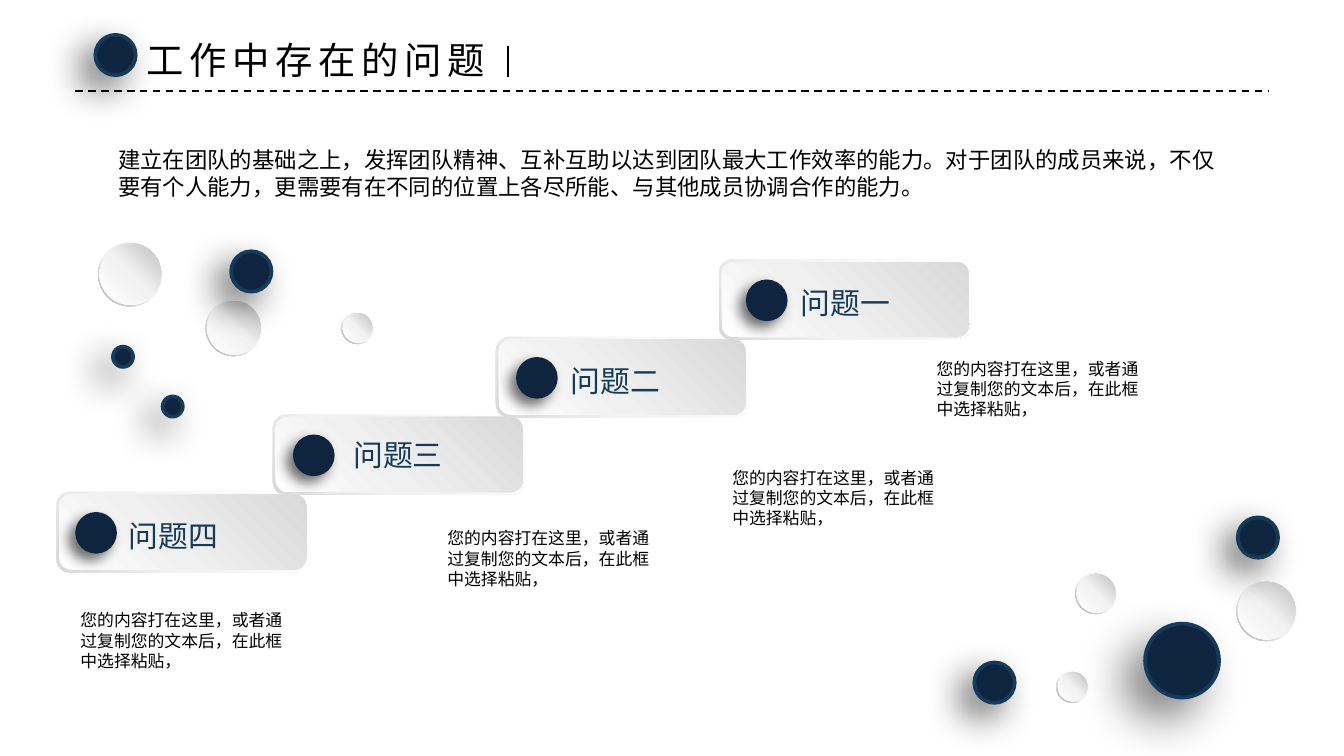
from lxml import etree
from pptx import Presentation
from pptx.dml.color import RGBColor
from pptx.enum.dml import MSO_LINE
from pptx.enum.shapes import MSO_CONNECTOR, MSO_SHAPE as SHAPE
from pptx.enum.text import MSO_AUTO_SIZE as AUTO
from pptx.oxml.ns import qn
from pptx.util import Inches, Pt

BLACK = RGBColor(0x00, 0x00, 0x00)
NAVY = RGBColor(0x0F, 0x24, 0x3E)
BLUE = RGBColor(0x16, 0x3A, 0x5A)
WHITE = RGBColor(0xFF, 0xFF, 0xFF)
PALE = RGBColor(0xF2, 0xF2, 0xF2)
SOFT = RGBColor(0xF0, 0xF0, 0xF0)
LIGHT = RGBColor(0xD9, 0xD9, 0xD9)
SILVER = RGBColor(0xBF, 0xBF, 0xBF)
GRAY = RGBColor(0xA6, 0xA6, 0xA6)

CJK = "Noto Sans CJK SC"
BODY = "Arial"


class Deck:
    def __init__(self, prs):
        self.s = prs.slides.add_slide(prs.slide_layouts[6])

    def shape(self, kind, x, y, w, h, parent=None):
        shapes = (parent or self.s).shapes
        sp = shapes.add_shape(kind, Inches(x), Inches(y), Inches(w), Inches(h))
        sp.line.fill.background()
        sp.shadow.inherit = False
        return sp

    def gradient(self, sp, stops, angle):
        """Fill with (percent, colour) stops, the angle running clockwise."""
        sp.fill.gradient()
        grad = sp._element.spPr.find(qn("a:gradFill"))
        for child in list(grad):
            grad.remove(child)
        gs_list = etree.SubElement(grad, qn("a:gsLst"))
        for percent, color in stops:
            gs = etree.SubElement(gs_list, qn("a:gs"), pos=str(percent * 1000))
            etree.SubElement(gs, qn("a:srgbClr"), val=str(color))
        etree.SubElement(grad, qn("a:lin"), ang=str(angle * 60000), scaled="0")

    def dot(self, x, y, size, shadow, outlined=True, parent=None):
        """Navy disc; shadow is (opacity percent, blur pt, distance pt)."""
        sp = self.shape(SHAPE.OVAL, x, y, size, size, parent)
        sp.fill.solid()
        sp.fill.fore_color.rgb = NAVY
        if outlined:
            sp.line.color.rgb = BLUE
            sp.line.width = Pt(2)
        opacity, blur, dist = shadow
        effects = sp._element.spPr.find(qn("a:effectLst"))
        outer = etree.SubElement(
            effects, qn("a:outerShdw"), blurRad=str(Pt(blur)), dist=str(Pt(dist)),
            dir=str(135 * 60000), algn="tr", rotWithShape="0")
        clr = etree.SubElement(outer, qn("a:srgbClr"), val=str(BLACK))
        etree.SubElement(clr, qn("a:alpha"), val=str(opacity * 1000))

    def pearl(self, x, y, size):
        group = self.s.shapes.add_group_shape()
        rim = self.shape(SHAPE.DONUT, x, y, size, size, group)
        rim.adjustments[0] = 0.05
        self.gradient(rim, [(0, WHITE), (55, PALE), (100, GRAY)], 135)
        inner = size - 0.02
        face = self.shape(SHAPE.OVAL, x + 0.01, y + 0.01, inner, inner, group)
        self.gradient(face, [(0, WHITE), (51, PALE), (100, SILVER)], 315)

    def plate(self, x, y, dot_x):
        group = self.s.shapes.add_group_shape()
        rim = self.shape(SHAPE.ROUNDED_RECTANGLE, x, y, 1.88, 0.6, group)
        self.gradient(rim, [(0, WHITE), (62, PALE), (100, LIGHT)], 135)
        face = self.shape(SHAPE.ROUNDED_RECTANGLE, x + 0.02, y + 0.02, 1.84, 0.56, group)
        self.gradient(face, [(0, WHITE), (42, SOFT), (100, LIGHT)], 315)
        self.dot(dot_x, y + 0.15, 0.31, (57, 7, 5), False, group)

    def text(self, x, y, w, h, lines, size, font=CJK, color=BLACK, wrap=False, spacing=0):
        tf = self.s.shapes.add_textbox(Inches(x), Inches(y), Inches(w), Inches(h)).text_frame
        tf.word_wrap = wrap
        tf.auto_size = AUTO.SHAPE_TO_FIT_TEXT
        for i, line in enumerate(lines):
            p = tf.add_paragraph() if i else tf.paragraphs[0]
            r = p.add_run()
            r.text = line
            r.font.size = Pt(size)
            r.font.color.rgb = color
            r.font.name = font
            rPr = r._r.get_or_add_rPr()
            etree.SubElement(rPr, qn("a:ea"), typeface=font)
            if spacing:
                rPr.set("spc", str(spacing * 100))

    def line(self, x1, y1, x2, y2, width, dash=None):
        ln = self.s.shapes.add_connector(
            MSO_CONNECTOR.STRAIGHT, Inches(x1), Inches(y1), Inches(x2), Inches(y2))
        ln.line.color.rgb = BLACK
        ln.line.width = Pt(width)
        if dash:
            ln.line.dash_style = dash
        etree.SubElement(ln._element.spPr, qn("a:effectLst"))


INTRO = [
    "建立在团队的基础之上，发挥团队精神、互补互助以达到团队最大工作效率的能力。对于团队的成员来说，不仅",
    "要有个人能力，更需要有在不同的位置上各尽所能、与其他成员协调合作的能力。",
]
NOTE = "您的内容打在这里，或者通过复制您的文本后，在此框中选择粘贴，"

# label, plate x, dot x, label position, note position; from the bottom step up
STEPS = [
    ("问题四", 0.42, 0.56, (0.86, 3.8), (0.5, 4.49)),
    ("问题三", 2.03, 2.18, (2.53, 3.2), (3.23, 3.88)),
    ("问题二", 3.69, 3.84, (4.15, 2.65), (5.35, 3.43)),
    ("问题一", 5.35, 5.55, (5.86, 2.07), (6.87, 2.62)),
]
FIRST_STEP_Y = 3.66
STEP_RISE = (FIRST_STEP_Y - 1.93) / (len(STEPS) - 1)

PEARLS = [
    (0.73, 1.8, 0.48), (1.53, 2.23, 0.42), (7.86, 4.99, 0.24),
    (8, 4.26, 0.31), (9.2, 4.32, 0.45), (2.54, 2.32, 0.24),
]
DOTS = [
    (9.21, 3.85, 0.3), (1.72, 1.87, 0.3), (0.84, 2.58, 0.15),
    (7.25, 4.93, 0.3), (1.21, 2.95, 0.15), (0.71, 0.26, 0.3),
]


def main():
    prs = Presentation()
    prs.slide_width = Inches(10)
    prs.slide_height = prs.slide_width * 9 // 16
    deck = Deck(prs)

    deck.text(0.78, 1.04, 8.45, 0.5, INTRO, 12)
    for i, (label, plate_x, dot_x, _, _) in enumerate(STEPS):
        deck.plate(plate_x, FIRST_STEP_Y - i * STEP_RISE, dot_x)
    for label, _, _, label_at, _ in STEPS:
        deck.text(*label_at, 0.88, 0.37, [label], 16, color=BLUE)

    for pearl in PEARLS:
        deck.pearl(*pearl)
    deck.dot(8.52, 4.64, 0.55, (50, 25, 15))
    for dot in DOTS:
        deck.dot(*dot, (60, 20, 10))

    for *_, note_at in STEPS:
        deck.text(*note_at, 1.71, 0.56, [NOTE], 9, BODY, wrap=True)

    deck.line(0.56, 0.68, 9.44, 0.68, 1, MSO_LINE.DASH)
    deck.text(0.99, 0.23, 2.78, 0.44, ["工作中存在的问题"], 20, spacing=3)
    deck.line(3.78, 0.34, 3.78, 0.57, 1.5)

    prs.save("out.pptx")


if __name__ == "__main__":
    main()
